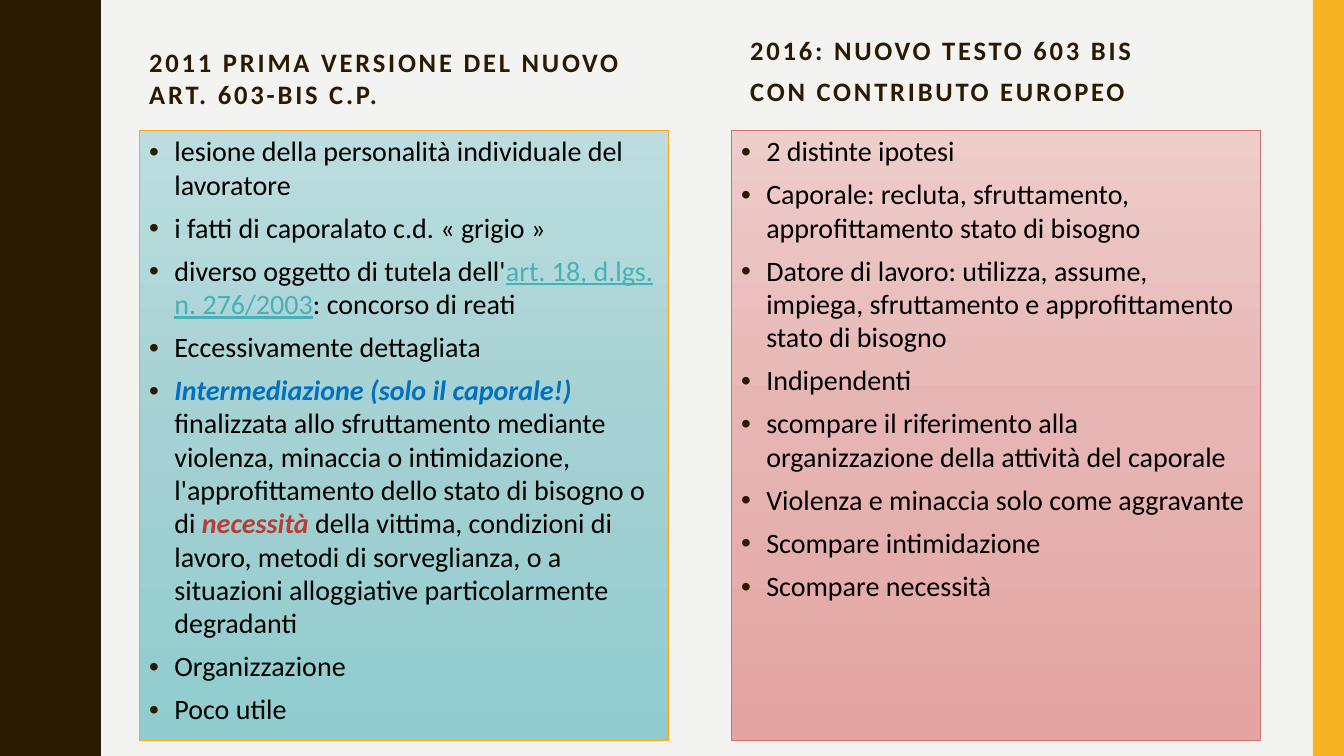
from copy import deepcopy
from lxml.etree import SubElement
from pptx import Presentation
from pptx.dml.color import RGBColor
from pptx.enum.shapes import MSO_SHAPE
from pptx.enum.text import MSO_ANCHOR, MSO_AUTO_SIZE, PP_ALIGN
from pptx.oxml.ns import qn
from pptx.util import Inches, Pt

PAPER = RGBColor(0xF3, 0xF3, 0xF2)
BROWN = RGBColor(0x2A, 0x1A, 0x00)
GOLD = RGBColor(0xF8, 0xB3, 0x23)
BLACK = RGBColor(0x00, 0x00, 0x00)
BLUE = RGBColor(0x00, 0x70, 0xC0)
RED = RGBColor(0xB7, 0x3E, 0x35)
TEAL = RGBColor(0x46, 0xB2, 0xB5)
AMBER = RGBColor(0xFF, 0xA6, 0x15)
ROSE = RGBColor(0xD3, 0x6F, 0x68)
AQUAS = [RGBColor(0xBC, 0xDD, 0xDF), RGBColor(0xA4, 0xD1, 0xD3), RGBColor(0x90, 0xCC, 0xCE)]
PINKS = [RGBColor(0xEE, 0xCD, 0xCB), RGBColor(0xE6, 0xB4, 0xB2), RGBColor(0xE4, 0xA4, 0xA1)]

HEAD = {"name": "Calibri", "size": Pt(19), "bold": True}
BODY = {"name": "Calibri", "size": Pt(20), "bold": False}
STRONG = {"bold": True, "italic": True}
FRAME = {"word_wrap": True, "auto_size": MSO_AUTO_SIZE.NONE, "vertical_anchor": MSO_ANCHOR.TOP}
PARA = {"alignment": PP_ALIGN.LEFT, "space_before": Pt(7), "space_after": Pt(0), "line_spacing": 0.99}


def apply(item, style):
    for key, value in style.items():
        setattr(item, key, value)


def place(hold, left, top, wide, high):
    apply(hold, {"left": Inches(left), "top": Inches(top), "width": Inches(wide), "height": Inches(high)})
    apply(hold.text_frame, FRAME)


deck = Presentation()
apply(deck, {"slide_width": Inches(13.33), "slide_height": Inches(7.5)})
slide = deck.slides.add_slide(deck.slide_layouts[4])
slide.background.fill.solid()
slide.background.fill.fore_color.rgb = PAPER
title = slide.shapes.title.element
title.getparent().remove(title)

rise = [(0.78, 0), (0.78, 0.07), (0.79, 0.14), (0.8, 0.2), (0.81, 0.25), (0.83, 0.29),
        (0.85, 0.33), (0.87, 0.38), (0.89, 0.42), (0.91, 0.46), (0.93, 0.5),
        (0.95, 0.55), (0.96, 0.61), (0.97, 0.68), (0.97, 0.75)]
swell = rise + [(x, 1.5 - y) for x, y in rise[-2::-1]]
edge = [(x, y + 1.5 * turn) for turn in range(5) for x, y in swell]
pen = slide.shapes.build_freeform(0, 0, scale=Inches(1))
pen.add_line_segments(edge + [(0, 7.5)], close=True)
wave = pen.convert_to_shape()
band = slide.shapes.add_shape(MSO_SHAPE.RECTANGLE, Inches(13.02), 0, Inches(0.31), Inches(7.5))
for shape, color in [(wave, BROWN), (band, GOLD)]:
    shape.shadow.inherit = False
    shape.fill.solid()
    shape.fill.fore_color.rgb = color
    shape.line.fill.background()

heads = [
    (1, 1.38, 0.42, 5.25, 0.74, ["2011 PRIMA VERSIONE DEL NUOVO ART. 603-BIS C.P."]),
    (3, 7.34, 0.3, 5.56, 0.81, ["2016: NUOVO TESTO 603 BIS", "CON CONTRIBUTO EUROPEO"]),
]
for slot, left, top, wide, high, lines in heads:
    hold = slide.placeholders[slot]
    place(hold, left, top, wide, high)
    hold.text_frame.text = "\n".join(lines)
    for para in hold.text_frame.paragraphs:
        apply(para, PARA)
        run = para.runs[0]
        apply(run.font, HEAD)
        run.font.color.rgb = BROWN
        run.font._element.set("spc", "200")

old = [
    ["lesione della personalità individuale del lavoratore"],
    ["i fatti di caporalato c.d. « grigio »"],
    ["diverso oggetto di tutela dell'",
     ("art. 18, d.lgs. n. 276/2003", TEAL, {"underline": True}),
     ": concorso di reati"],
    ["Eccessivamente dettagliata"],
    [("Intermediazione (solo il caporale!)", BLUE, STRONG),
     " finalizzata allo sfruttamento mediante violenza, minaccia o intimidazione, "
     "l'approfittamento dello stato di bisogno o di ",
     ("necessità", RED, STRONG),
     " della vittima, condizioni di lavoro, metodi di sorveglianza, o a situazioni "
     "alloggiative particolarmente degradanti"],
    ["Organizzazione"],
    ["Poco utile"],
]
new = [
    ["2 distinte ipotesi"],
    ["Caporale: recluta, sfruttamento, approfittamento stato di bisogno"],
    ["Datore di lavoro: utilizza, assume, impiega, sfruttamento e approfittamento stato di bisogno"],
    ["Indipendenti"],
    ["scompare il riferimento alla organizzazione della attività del caporale"],
    ["Violenza e minaccia solo come aggravante"],
    ["Scompare intimidazione"],
    ["Scompare necessità"],
]
for slot, left, shades, rim, items in [(2, 1.38, AQUAS, AMBER, old), (4, 7.25, PINKS, ROSE, new)]:
    hold = slide.placeholders[slot]
    place(hold, left, 1.29, 5.25, 6.06)
    hold.fill.gradient()
    hold.fill.gradient_angle = 270
    stops = hold.element.spPr.find(".//" + qn("a:gsLst"))
    stops.insert(1, deepcopy(stops[0]))
    for stop, shade, spot in zip(hold.fill.gradient_stops, shades, [0, 0.5, 1]):
        stop.color.rgb = shade
        stop.position = spot
    hold.line.color.rgb = rim
    hold.line.width = Pt(0.5)
    frame = hold.text_frame
    for count, item in enumerate(items):
        para = frame.add_paragraph() if count else frame.paragraphs[0]
        apply(para, PARA)
        props = para._p.get_or_add_pPr()
        props.set("marL", str(Inches(0.25)))
        props.set("indent", str(-Inches(0.25)))
        tint = SubElement(props, qn("a:buClr"))
        SubElement(tint, qn("a:srgbClr")).set("val", str(BROWN))
        SubElement(props, qn("a:buChar")).set("char", "•")
        for part in item:
            text, color, style = (part, BLACK, {}) if isinstance(part, str) else part
            run = para.add_run()
            run.text = text
            apply(run.font, {**BODY, **style})
            run.font.color.rgb = color

deck.save("out.pptx")
